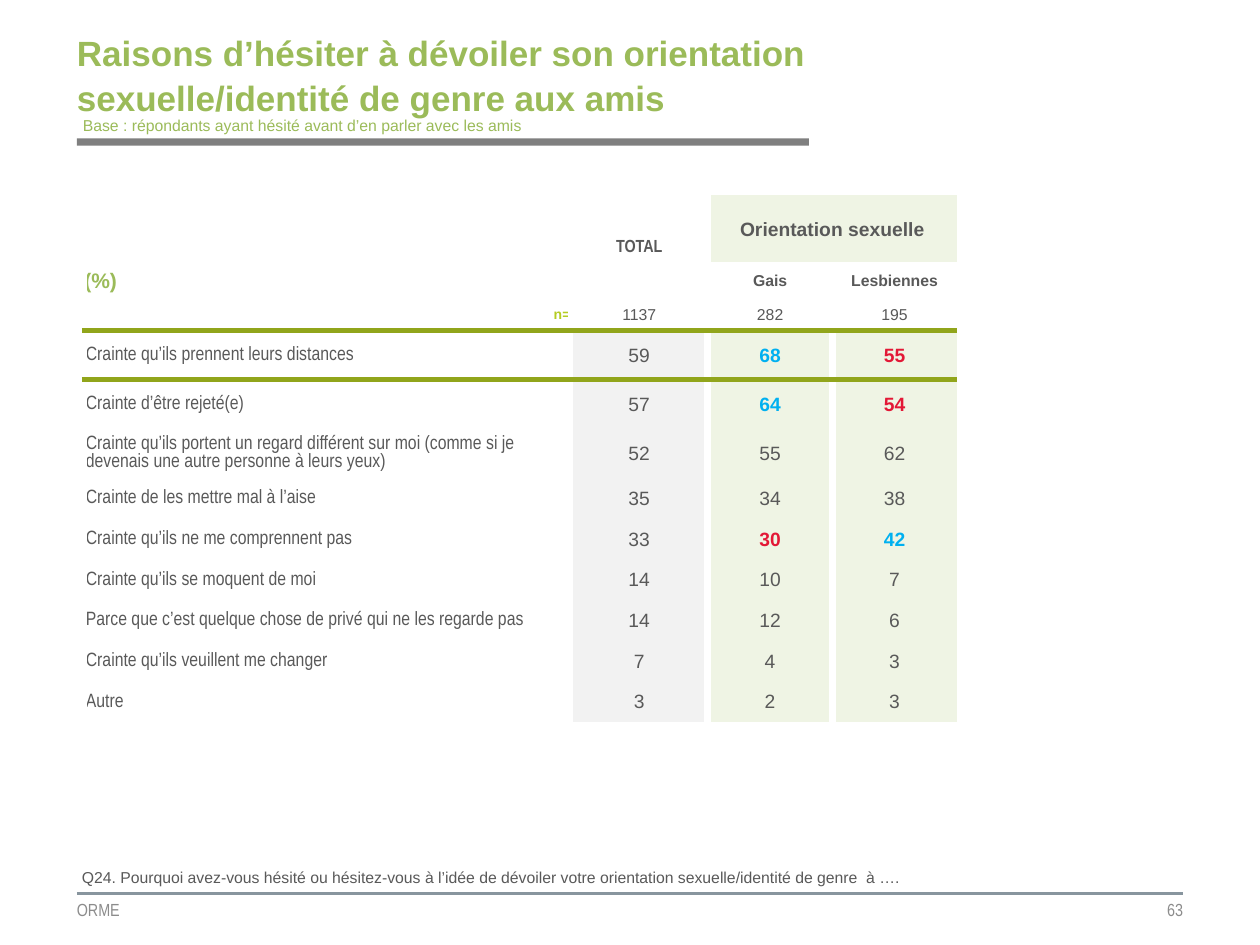
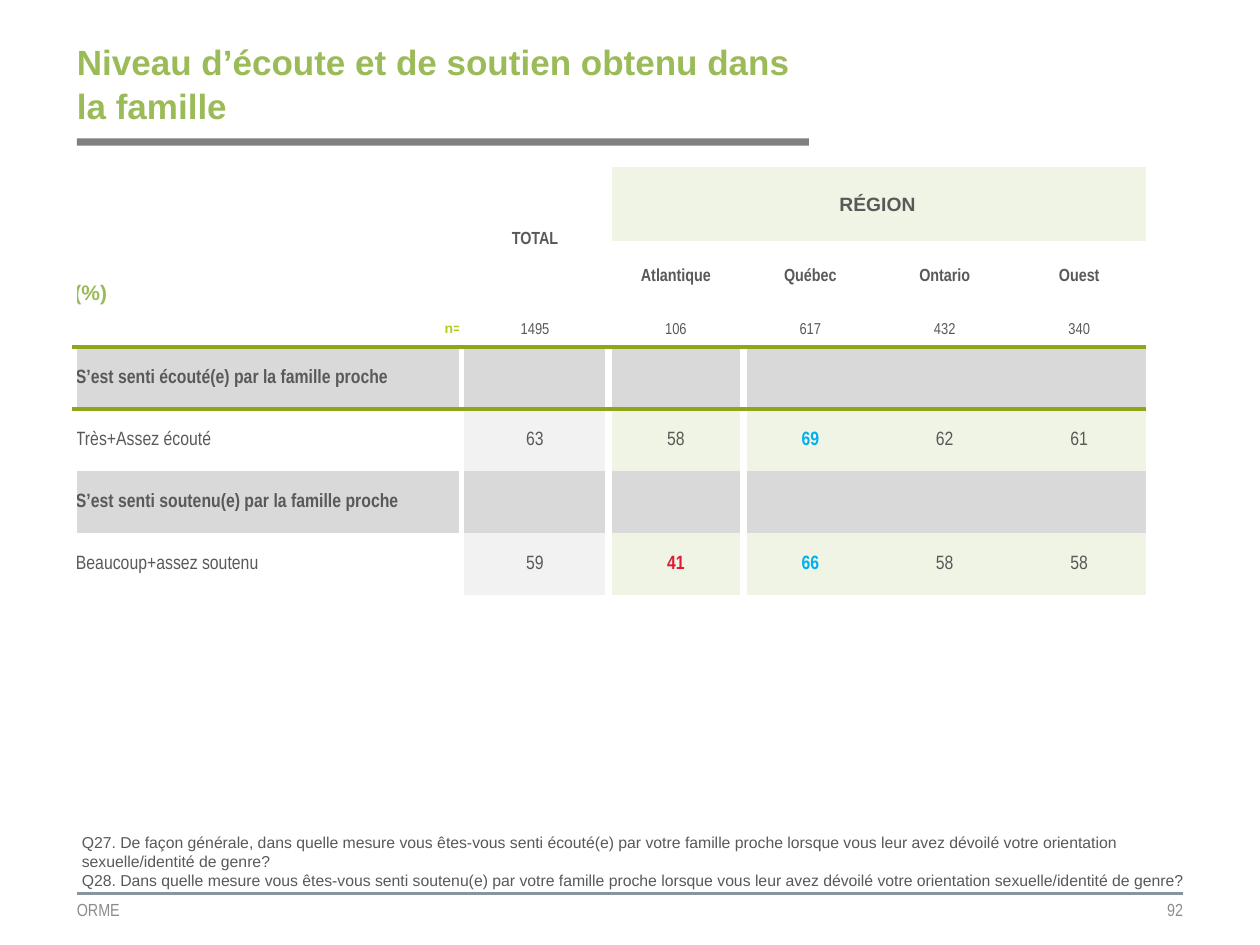
from lxml import etree
from pptx import Presentation
from pptx.dml.color import RGBColor
from pptx.enum.shapes import MSO_CONNECTOR, MSO_SHAPE
from pptx.enum.text import MSO_ANCHOR as Anchor, MSO_AUTO_SIZE as AutoSize, PP_ALIGN as Align
from pptx.oxml.ns import qn
from pptx.util import Cm, Pt

# Colours
GREEN = RGBColor(0x9B, 0xBB, 0x59)
LIME = RGBColor(0xB5, 0xCC, 0x22)
OLIVE = RGBColor(0x91, 0xA5, 0x1B)
PALE_GREEN = RGBColor(0xEF, 0xF4, 0xE4)
PALE_GREY = RGBColor(0xF2, 0xF2, 0xF2)
SECTION_GREY = RGBColor(0xD9, 0xD9, 0xD9)
BAND_GREY = RGBColor(0x7F, 0x7F, 0x7F)
FOOTER_GREY = RGBColor(0x8C, 0x8C, 0x8C)
RULE_BLUE = RGBColor(0x88, 0x95, 0x9E)
TEXT_GREY = RGBColor(0x59, 0x59, 0x59)
HIGHER = RGBColor(0x00, 0xB0, 0xF0)
LOWER = RGBColor(0xE3, 0x18, 0x36)
WHITE = RGBColor(0xFF, 0xFF, 0xFF)

# Fonts and shared measures (cm)
SANS, NARROW = "Arial", "Arial Narrow"
LEFT, RIGHT, FOOTER_TOP = 1.55, 23.85, 18.01
NO_GRID_STYLE = "{2D5ABB26-0587-4C30-8999-92F81FD0307C}"
HEADER_ROWS = 4

# A leading + marks a significantly higher value, a leading - a lower one
FRIENDS_ROWS = [
    ("Crainte qu’ils prennent leurs distances", "59 +68 -55"),
    ("Crainte d’être rejeté(e)", "57 +64 -54"),
    ("Crainte qu’ils portent un regard différent sur moi (comme si je "
     "devenais une autre personne à leurs yeux)", "52 55 62"),
    ("Crainte de les mettre mal à l’aise", "35 34 38"),
    ("Crainte qu’ils ne me comprennent pas", "33 -30 +42"),
    ("Crainte qu’ils se moquent de moi", "14 10 7"),
    ("Parce que c’est quelque chose de privé qui ne les regarde pas", "14 12 6"),
    ("Crainte qu’ils veuillent me changer", "7 4 3"),
    ("Autre", "3 2 3"),
]
# A row without values is a section heading
FAMILY_ROWS = [
    ("S’est senti écouté(e) par la famille proche", ""),
    ("Très+Assez écouté", "63 58 +69 62 61"),
    ("S’est senti soutenu(e) par la famille proche", ""),
    ("Beaucoup+assez soutenu", "59 -41 +66 58 58"),
]


def write(frame, text, size=11, font=SANS, color=TEXT_GREY, bold=False,
          align=Align.LEFT, anchor=Anchor.MIDDLE, spacing=None):
    """Fill a text frame, one paragraph per line of text."""
    frame.word_wrap = True
    frame.vertical_anchor = anchor
    for number, line in enumerate(text.split("\n")):
        paragraph = frame.add_paragraph() if number else frame.paragraphs[0]
        paragraph.alignment = align
        if spacing:
            paragraph.line_spacing = spacing
        run = paragraph.add_run()
        run.text = line
        run.font.size, run.font.name, run.font.bold = Pt(size), font, bold
        run.font.color.rgb = color


def set_margins(target, left=0, top=0, right=0, bottom=0):
    target.margin_left, target.margin_top = Cm(left), Cm(top)
    target.margin_right, target.margin_bottom = Cm(right), Cm(bottom)


def add_text(slide, box, text, tight=False, **style):
    frame = slide.shapes.add_textbox(*map(Cm, box)).text_frame
    if tight:
        set_margins(frame)
    write(frame, text, **style)


def add_title(slide, box, text, bottom_margin=0):
    title = slide.shapes.title
    title.left, title.top, title.width, title.height = map(Cm, box)
    frame = title.text_frame
    frame.auto_size = AutoSize.NONE
    set_margins(frame, bottom=bottom_margin)
    write(frame, text, size=20, color=GREEN, bold=True, spacing=1.05)


def add_frame(slide, page):
    """Band under the title, footer rule, institute name and page number."""
    band = slide.shapes.add_shape(MSO_SHAPE.RECTANGLE, Cm(LEFT), Cm(2.79), Cm(14.76), Cm(0.15))
    band.shadow.inherit = False
    band.fill.solid()
    band.fill.fore_color.rgb = BAND_GREY
    band.line.fill.background()

    rule = slide.shapes.add_connector(MSO_CONNECTOR.STRAIGHT, Cm(LEFT), Cm(FOOTER_TOP),
                                      Cm(RIGHT), Cm(FOOTER_TOP))
    rule.line.color.rgb = RULE_BLUE
    rule.line.width = Pt(1.5)
    etree.SubElement(rule._element.spPr, qn("a:effectLst"))

    style = dict(tight=True, size=10, font=NARROW, color=FOOTER_GREY)
    add_text(slide, (LEFT, FOOTER_TOP, 7.11, 0.66), "ORME", **style)
    add_text(slide, (RIGHT - 7.21, FOOTER_TOP, 7.21, 0.66), page, align=Align.RIGHT, **style)


def new_slide(presentation, page):
    slide = presentation.slides.add_slide(presentation.slide_layouts[5])
    add_frame(slide, page)
    return slide


def set_borders(cell, edges):
    """Draw borders given as {edge: (colour, points)}, in schema order."""
    properties = cell._tc.get_or_add_tcPr()
    ordered = [edge for edge in "LRTB" if edge in edges]
    for position, edge in enumerate(ordered):
        color, width = edges[edge]
        line = etree.Element(qn("a:ln" + edge), w=str(Pt(width)))
        fill = etree.SubElement(line, qn("a:solidFill"))
        etree.SubElement(fill, qn("a:srgbClr"), val=str(color))
        properties.insert(position, line)


def cell_fill(row, column, is_section):
    if row < HEADER_ROWS:
        return PALE_GREEN if row < 2 and column > 1 else None
    if is_section:
        return SECTION_GREY
    return (None, PALE_GREY)[column] if column < 2 else PALE_GREEN


def cell_borders(row, column, last_column):
    """White gaps around the total column, olive line under the header."""
    left = {0: 3, 1: 3, 2: 4.5}
    right = {0: 3, 1: 4.5}
    edges = {}
    if column in left:
        edges["L"] = (WHITE, left[column])
    if column in right:
        edges["R"] = (WHITE, right[column])
    elif column == last_column and row < 2:
        edges["R"] = (WHITE, 4.5)
    if row == HEADER_ROWS - 1:
        edges["B"] = (OLIVE, 3)
    elif row == HEADER_ROWS:
        edges["T"] = (OLIVE, 3)
    return edges


def write_header(table, group, names, counts, name_style, count_font):
    centred = dict(align=Align.CENTER)
    last_column = len(names) + 1
    table.cell(0, 1).merge(table.cell(2, 1))
    table.cell(0, 2).merge(table.cell(1, last_column))
    table.cell(1, 0).merge(table.cell(2, 0))
    write(table.cell(0, 1).text_frame, "TOTAL", size=10, font=NARROW, bold=True, **centred)
    write(table.cell(0, 2).text_frame, group, bold=True, **centred)

    for row, text, style in (
            (1, "(%)", dict(size=12, color=GREEN, anchor=Anchor.BOTTOM)),
            (3, "n=", dict(size=8, color=LIME, align=Align.RIGHT))):
        cell = table.cell(row, 0)
        set_margins(cell, top=0.13, bottom=0.13)
        write(cell.text_frame, text, bold=True, spacing=0.95, **style)
        cell.vertical_anchor = style.get("anchor", Anchor.MIDDLE)

    for column, name in enumerate(names, 2):
        write(table.cell(2, column).text_frame, name, bold=True, **name_style, **centred)
    for column, count in enumerate(counts, 1):
        write(table.cell(3, column).text_frame, count, size=9, font=count_font, **centred)


def write_rows(table, rows, value_font):
    marks = {"+": HIGHER, "-": LOWER}
    for row, (label, values) in enumerate(rows, HEADER_ROWS):
        write(table.cell(row, 0).text_frame, label, font=NARROW, bold=not values)
        for column, value in enumerate(values.split(), 1):
            write(table.cell(row, column).text_frame, value.lstrip("+-"), font=value_font,
                  color=marks.get(value[0], TEXT_GREY), bold=value[0] in marks,
                  align=Align.CENTER)


def add_survey_table(slide, position, widths, heights, rows, value_font, **header):
    left, top = position
    frame = slide.shapes.add_table(len(heights), len(widths), Cm(left), Cm(top),
                                   Cm(sum(widths)), Cm(sum(heights)))
    table = frame.table
    table.first_row = table.horz_banding = False
    table._tbl.tblPr.find(qn("a:tableStyleId")).text = NO_GRID_STYLE
    for column, width in zip(table.columns, widths):
        column.width = Cm(width)
    for row, height in zip(table.rows, heights):
        row.height = Cm(height)

    # Fills, borders and margins; small empty paragraphs keep short rows short
    for row in range(len(heights)):
        is_section = row >= HEADER_ROWS and not rows[row - HEADER_ROWS][1]
        for column in range(len(widths)):
            cell = table.cell(row, column)
            set_margins(cell, 0.03, 0.03, 0.03)
            cell.vertical_anchor = Anchor.MIDDLE
            color = cell_fill(row, column, is_section)
            if color is None:
                cell.fill.background()
            else:
                cell.fill.solid()
                cell.fill.fore_color.rgb = color
            set_borders(cell, cell_borders(row, column, len(widths) - 1))
            paragraph = cell.text_frame.paragraphs[0]
            paragraph._p.get_or_add_endParaRPr().set("sz", "400")

    write_header(table, **header)
    write_rows(table, rows, value_font)


def build_friends_slide(presentation):
    slide = new_slide(presentation, "63")
    add_title(slide, (LEFT, 0.97, 15.75, 1.75),
              "Raisons d’hésiter à dévoiler son orientation sexuelle/identité de genre aux amis",
              bottom_margin=0.71)
    add_text(slide, (1.42, 2.21, 9.55, 0.64),
             "Base : répondants ayant hésité avant d’en parler avec les amis",
             size=9, color=GREEN, anchor=Anchor.TOP)
    add_text(slide, (1.4, 17.37, 21.72, 0.64),
             "Q24. Pourquoi avez-vous hésité ou hésitez-vous à l’idée de dévoiler votre "
             "orientation sexuelle/identité de genre  à ….", size=9, anchor=Anchor.TOP)
    add_survey_table(
        slide, (1.7, 3.93), [9.8, 2.77, 2.51, 2.51],
        [0.86, 0.23, 0.74, 0.63] + [0.99] * 3 + [0.82] * 6, FRIENDS_ROWS, SANS,
        group="Orientation sexuelle", names=["Gais", "Lesbiennes"],
        counts=["1137", "282", "195"], name_style=dict(size=9, font=SANS), count_font=SANS)


def build_family_slide(presentation):
    slide = new_slide(presentation, "92")
    add_title(slide, (LEFT, 0.53, 14.76, 2.26),
              "Niveau d’écoute et de soutien obtenu dans la famille")
    add_survey_table(
        slide, (1.5, 3.37), [7.8, 2.97] + [2.71] * 4,
        [0.99, 0.43, 1.42, 0.72] + [1.25] * 4, FAMILY_ROWS, NARROW,
        group="RÉGION", names=["Atlantique", "Québec", "Ontario", "Ouest"],
        counts=["1495", "106", "617", "432", "340"],
        name_style=dict(size=10, font=NARROW), count_font=NARROW)
    add_text(slide, (1.4, 16.66, 22.75, 1.42),
             "Q27. De façon générale, dans quelle mesure vous êtes-vous senti écouté(e) par "
             "votre famille proche lorsque vous leur avez dévoilé votre orientation "
             "sexuelle/identité de genre?\n"
             "Q28. Dans quelle mesure vous êtes-vous senti soutenu(e) par votre famille proche "
             "lorsque vous leur avez dévoilé votre orientation sexuelle/identité de genre?",
             size=9, anchor=Anchor.TOP)


def main():
    presentation = Presentation()
    presentation.slide_width, presentation.slide_height = Cm(25.4), Cm(19.05)
    build_friends_slide(presentation)
    build_family_slide(presentation)
    presentation.save("out.pptx")


if __name__ == "__main__":
    main()
